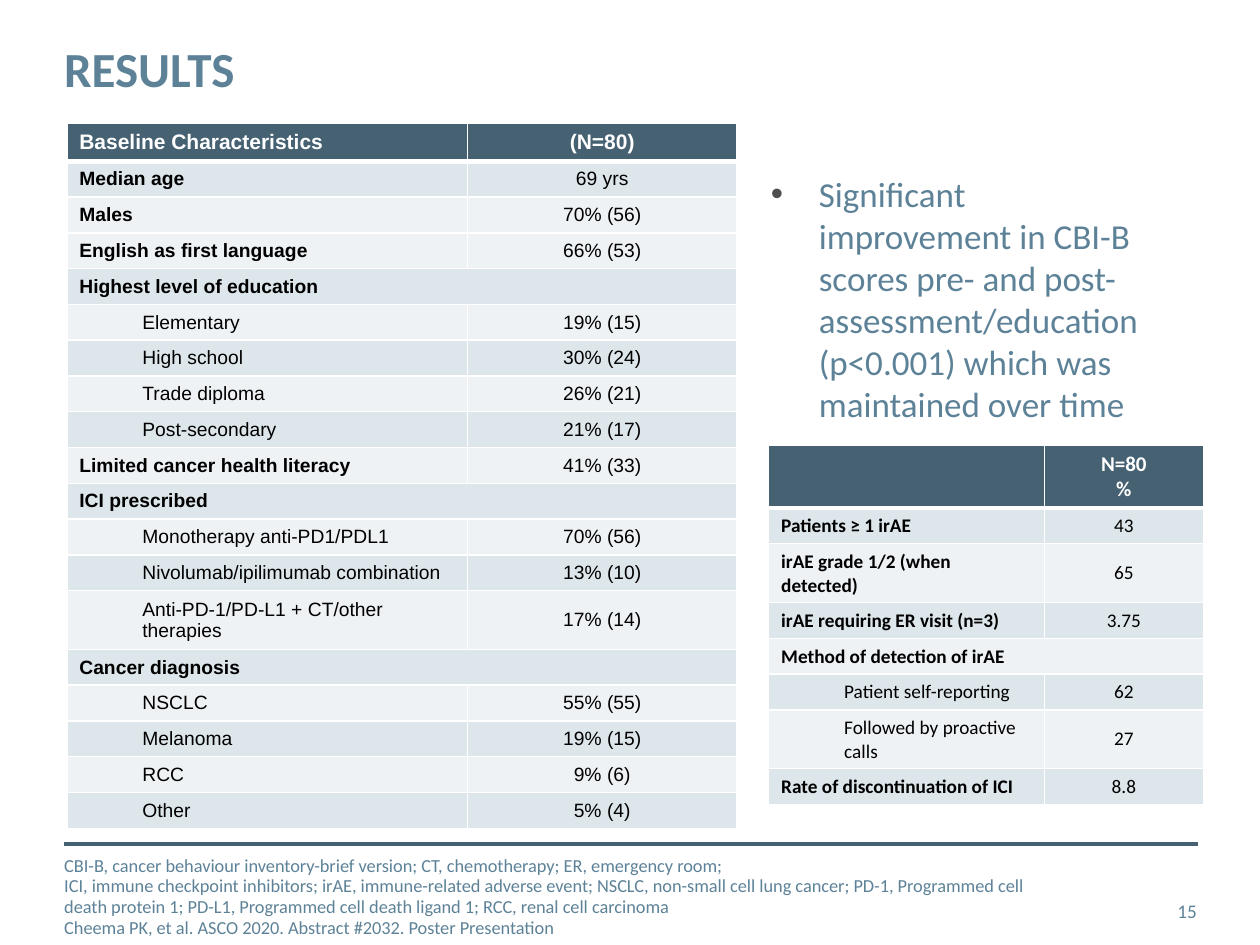
from pptx import Presentation
from pptx.dml.color import RGBColor
from pptx.enum.shapes import MSO_CONNECTOR
from pptx.enum.text import MSO_ANCHOR, MSO_AUTO_SIZE, PP_ALIGN
from pptx.oxml.ns import qn
from pptx.util import Inches, Pt
from lxml.etree import SubElement

SLIDE_WIDTH, SLIDE_HEIGHT = Inches(10), Inches(7.5)
SLATE = RGBColor(0x45, 0x61, 0x72)
STEEL = RGBColor(0x5D, 0x82, 0x98)
BAND = RGBColor(0xDD, 0xE6, 0xEA)
PALE = RGBColor(0xDE, 0xE6, 0xEB)
BULLET_GREY = RGBColor(0x4F, 0x4D, 0x50)
WHITE = RGBColor(0xFF, 0xFF, 0xFF)
BLACK = RGBColor(0x00, 0x00, 0x00)

LEFT_EDGE, RIGHT_EDGE = 5.1, 95.1
HEADER_HEIGHT, ROW_HEIGHT = 3.2, 3.6

BASELINE = [
    (0, "Median age", "69 yrs"),
    (0, "Males", "70% (56)"),
    (0, "English as first language", "66% (53)"),
    (0, "Highest level of education", None),
    (1, "Elementary", "19% (15)"),
    (1, "High school", "30% (24)"),
    (1, "Trade diploma", "26% (21)"),
    (1, "Post-secondary", "21% (17)"),
    (0, "Limited cancer health literacy", "41% (33)"),
    (0, "ICI prescribed", None),
    (1, "Monotherapy anti-PD1/PDL1", "70% (56)"),
    (1, "Nivolumab/ipilimumab combination", "13% (10)"),
    (1, "Anti-PD-1/PD-L1 + CT/other therapies", "17% (14)"),
    (0, "Cancer diagnosis", None),
    (1, "NSCLC", "55% (55)"),
    (1, "Melanoma", "19% (15)"),
    (1, "RCC", "9% (6)"),
    (1, "Other", "5% (4)"),
]
ADVERSE_EVENTS = [
    (0, "Patients ≥ 1 irAE", "43"),
    (0, "irAE grade 1/2 (when detected)", "65"),
    (0, "irAE requiring ER visit (n=3)", "3.75"),
    (0, "Method of detection of irAE", None),
    (1, "Patient self-reporting", "62"),
    (1, "Followed by proactive calls", "27"),
    (0, "Rate of discontinuation of ICI", "8.8"),
]
FOOTNOTE = (
    "CBI-B, cancer behaviour inventory-brief version; CT, chemotherapy; ER, emergency room;\v"
    "ICI, immune checkpoint inhibitors; irAE, immune-related adverse event; "
    "NSCLC, non-small cell lung cancer; PD-1, Programmed cell\v"
    "death protein 1; PD-L1, Programmed cell death ligand 1; RCC, renal cell carcinoma\n"
    "Cheema PK, et al. ASCO 2020. Abstract #2032. Poster Presentation"
)
FINDING = ("Significant improvement in CBI-B scores pre- and post-assessment/education "
           "(p<0.001) which was maintained over time")


def across(percent):
    return round(SLIDE_WIDTH * percent / 100)


def down(percent):
    return round(SLIDE_HEIGHT * percent / 100)


def write(frame, text, *, size, color=STEEL, font="Calibri", bold=False,
          align=PP_ALIGN.LEFT, spacing=None, level=0, bullet=None):
    frame.text = text
    for paragraph in frame.paragraphs:
        properties = paragraph._p.get_or_add_pPr()
        if level:
            paragraph.level = level
            properties.set("marL", str(Inches(0.5)))
            properties.set("indent", "0")
        if bullet:
            properties.set("marL", str(Inches(0.38)))
            properties.set("indent", str(-Inches(0.38)))
            bullet_color = SubElement(properties, qn("a:buClr"))
            SubElement(bullet_color, qn("a:srgbClr"), val=str(BULLET_GREY))
            SubElement(properties, qn("a:buFont"), typeface="Arial")
            SubElement(properties, qn("a:buChar"), char=bullet)
        paragraph.alignment = align
        if spacing:
            paragraph.line_spacing = spacing
        paragraph.font.size = Pt(size)
        for run in paragraph.runs:
            run.font.size = Pt(size)
            run.font.name = font
            run.font.bold = bold
            run.font.color.rgb = color


def add_text(slide, box, text, *, anchor=MSO_ANCHOR.TOP, inset=0, **text_format):
    left, top, width, height = box
    frame = slide.shapes.add_textbox(across(left), down(top),
                                     across(width), down(height)).text_frame
    frame.word_wrap = True
    frame.vertical_anchor = anchor
    frame.margin_left = frame.margin_right = Inches(inset)
    frame.margin_top = frame.margin_bottom = Inches(inset / 2)
    write(frame, text, **text_format)
    return frame


def add_rule(slide, height):
    rule = slide.shapes.add_connector(MSO_CONNECTOR.STRAIGHT, across(LEFT_EDGE), down(height),
                                      across(RIGHT_EDGE), down(height))
    rule.line.color.rgb = SLATE
    rule.line.width = Pt(2)
    SubElement(rule._element.spPr, qn("a:effectLst"))


def style_cell(cell, fill, *, alpha=None, borders):
    properties = cell._tc.get_or_add_tcPr()
    for side, width in borders.items():
        border = SubElement(properties, qn(f"a:{side}"), w=str(Pt(width)))
        SubElement(SubElement(border, qn("a:solidFill")), qn("a:srgbClr"), val=str(WHITE))
    cell.fill.solid()
    cell.fill.fore_color.rgb = fill
    if alpha:
        fill_color = properties.find(qn("a:solidFill")).find(qn("a:srgbClr"))
        SubElement(fill_color, qn("a:alpha"), val=str(alpha * 1000))
    cell.vertical_anchor = MSO_ANCHOR.MIDDLE


def add_results_table(slide, corner, widths, headings, results, banded_rows, font):
    left, top = corner
    height = HEADER_HEIGHT + ROW_HEIGHT * len(results)
    table = slide.shapes.add_table(len(results) + 1, len(widths), across(left), down(top),
                                   across(sum(widths)), down(height)).table
    for column, width in zip(table.columns, widths):
        column.width = across(width)
    for index, row in enumerate(table.rows):
        row.height = down(ROW_HEIGHT if index else HEADER_HEIGHT)

    alignments = (PP_ALIGN.LEFT, PP_ALIGN.CENTER)
    for cell, heading, align in zip(table.rows[0].cells, headings, alignments):
        style_cell(cell, SLATE, borders={"lnL": 1, "lnR": 1, "lnT": 1, "lnB": 3})
        write(cell.text_frame, heading, size=12, color=WHITE, font=font, bold=True, align=align)

    for index, (level, label, value) in enumerate(results, start=1):
        label_cell, value_cell = table.rows[index].cells
        banded = index in banded_rows
        for cell in (label_cell, value_cell):
            style_cell(cell, BAND if banded else PALE, alpha=None if banded else 50,
                       borders={"lnL": 1, "lnR": 1, "lnB": 1})
        write(label_cell.text_frame, label, size=11, color=BLACK, font=font,
              bold=level == 0, level=level)
        if value is None:
            label_cell.merge(value_cell)
        else:
            write(value_cell.text_frame, value, size=11, color=BLACK, font=font,
                  align=PP_ALIGN.CENTER)


def main():
    presentation = Presentation()
    presentation.slide_width, presentation.slide_height = SLIDE_WIDTH, SLIDE_HEIGHT
    slide = presentation.slides.add_slide(presentation.slide_layouts[6])

    add_rule(slide, 89.33)
    add_text(slide, (88.6, 93.73, 6.4, 5.33), "15", size=11,
             align=PP_ALIGN.RIGHT, anchor=MSO_ANCHOR.MIDDLE)
    add_text(slide, (LEFT_EDGE, 3.6, 71.7, 11.73), "RESULTS", size=28, bold=True, spacing=1.07)
    add_text(slide, (LEFT_EDGE, 92.67, 92.9, 4.53), FOOTNOTE, size=10.5,
             spacing=0.95, anchor=MSO_ANCHOR.MIDDLE)
    add_results_table(slide, (5.3, 13.07), (31.8, 21.4), ("Baseline Characteristics", "(N=80)"),
                      BASELINE, {1, *range(4, 19, 2)}, "Arial")
    finding = add_text(slide, (60.2, 17.6, 33.2, 32.8), FINDING, size=20, inset=0.1, bullet="•")
    finding.auto_size = MSO_AUTO_SIZE.SHAPE_TO_FIT_TEXT
    add_results_table(slide, (61, 47.07), (21.9, 12.6), ("", "N=80\n%"),
                      ADVERSE_EVENTS, range(1, 8, 2), "Calibri")

    presentation.save("out.pptx")


if __name__ == "__main__":
    main()
